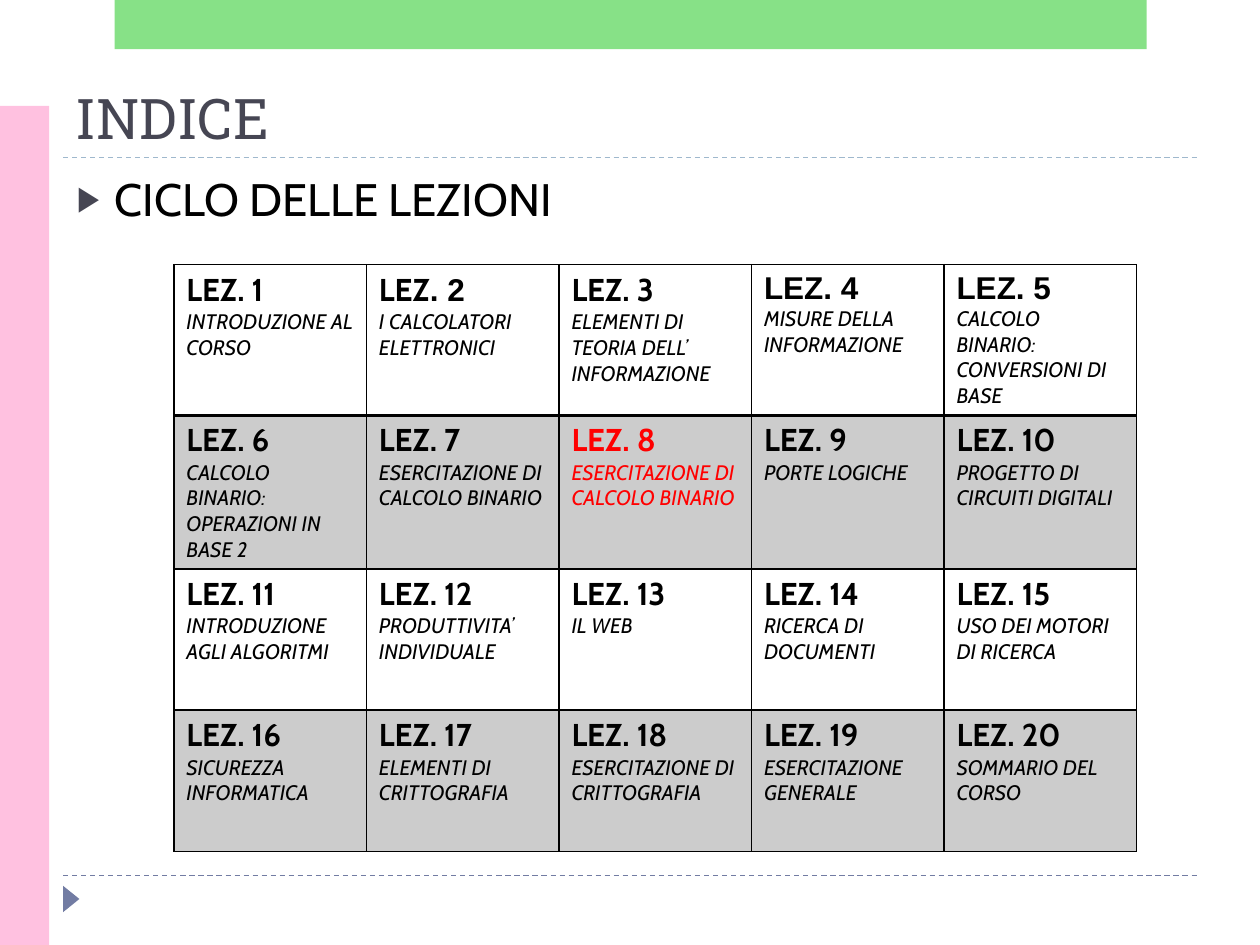
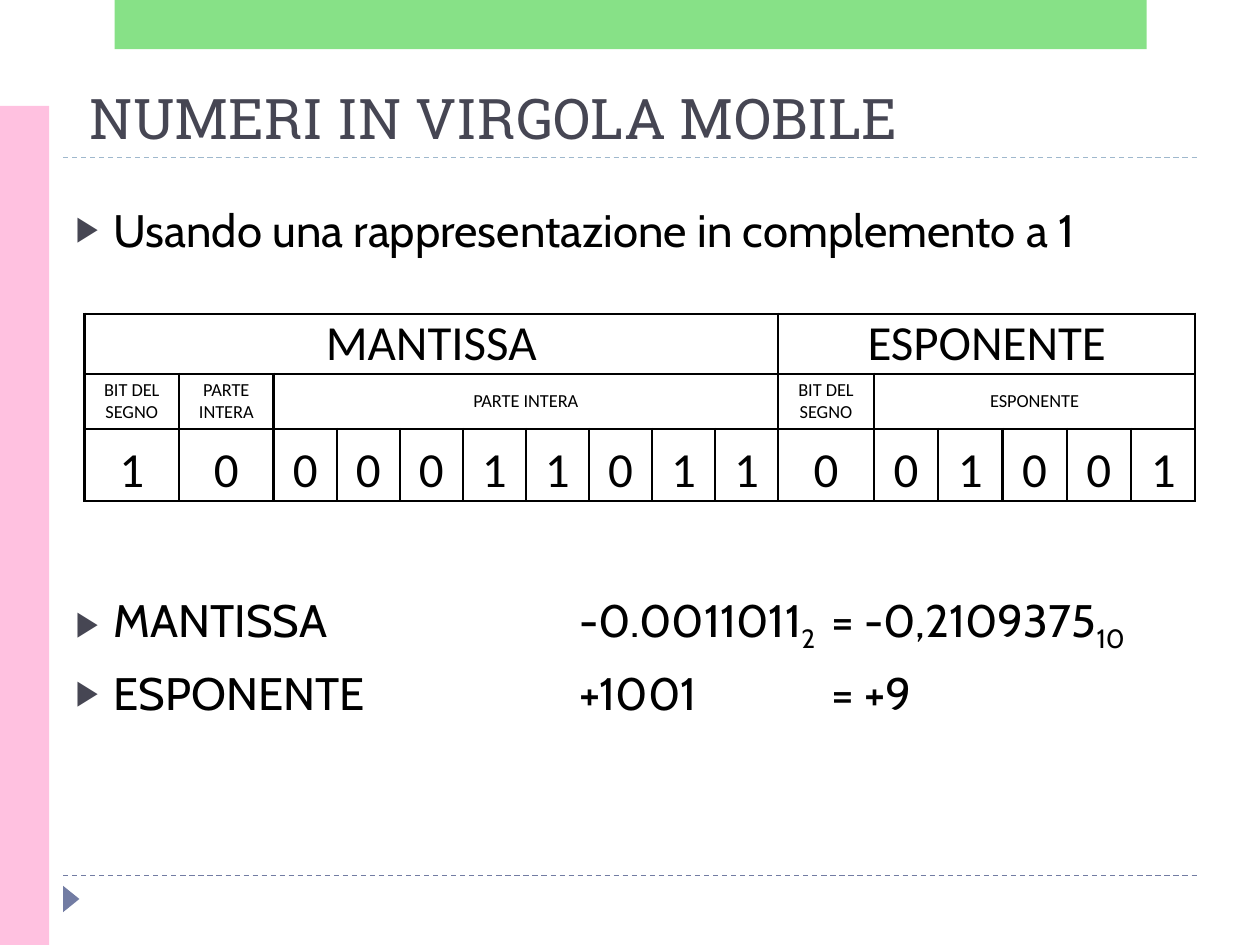
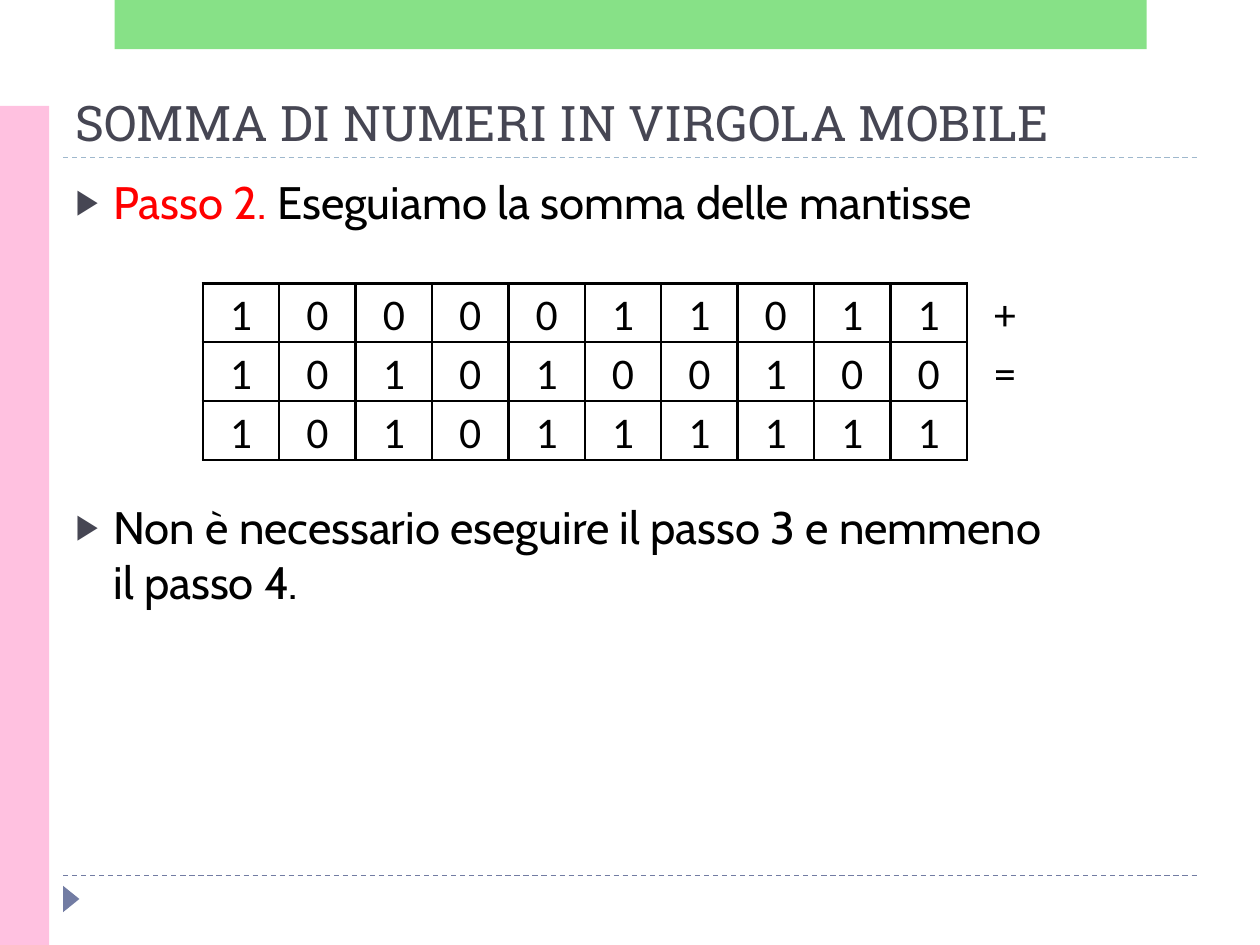
from dataclasses import dataclass

from lxml import etree
from pptx import Presentation
from pptx.dml.color import RGBColor
from pptx.enum.dml import MSO_LINE
from pptx.enum.shapes import MSO_CONNECTOR, MSO_SHAPE
from pptx.enum.text import MSO_ANCHOR, MSO_AUTO_SIZE, PP_ALIGN
from pptx.oxml.ns import qn
from pptx.util import Inches, Pt

DASH = MSO_LINE.DASH
STRAIGHT = MSO_CONNECTOR.STRAIGHT
RECTANGLE, TRIANGLE = MSO_SHAPE.RECTANGLE, MSO_SHAPE.ISOSCELES_TRIANGLE
TOP, MIDDLE, BOTTOM = MSO_ANCHOR.TOP, MSO_ANCHOR.MIDDLE, MSO_ANCHOR.BOTTOM
LEFT, CENTER = PP_ALIGN.LEFT, PP_ALIGN.CENTER
FIXED = MSO_AUTO_SIZE.NONE

WIDTH, HEIGHT = Inches(10), Inches(7.5)
COLUMN, ROW = WIDTH / 100, HEIGHT / 75
SIDES = {"left": "a:lnL", "right": "a:lnR", "top": "a:lnT", "bottom": "a:lnB"}


@dataclass(frozen=True)
class Theme:
    ink: str = "000000"
    paper: str = "FFFFFF"
    heading: str = "464653"
    accent: str = "FF0000"
    footer: str = "727CA3"
    title_rule: str = "9FB8CD"
    side_band: str = "FFC1E0"
    top_band: str = "62D862"
    title_font: str = "Roboto Slab"
    body_font: str = "Cabin"
    digit_font: str = "Calibri"
    plain_font: str = "Arial"
    title_size: float = 32
    long_title_size: float = 28
    body_size: float = 26
    lesson_size: float = 18
    topic_size: float = 12
    field_size: float = 28
    label_size: float = 10.5
    digit_size: float = 25
    list_gap: float = 6
    list_pitch: float = 37.2


THEME = Theme()
BODY_STYLE = {"name": THEME.body_font, "size": Pt(THEME.body_size), "color": THEME.ink}
SUBSCRIPT = {"baseline": "-25000"}


@dataclass(frozen=True)
class Box:
    column: float
    row: float
    columns: float
    rows: float

    def emu(self):
        return [int(n) for n in (self.column * COLUMN, self.row * ROW,
                                 self.columns * COLUMN, self.rows * ROW)]


def set_all(target, values):
    for attribute, value in values.items():
        setattr(target, attribute, value)


def format_font(font, style):
    for attribute, value in style.items():
        if attribute == "color":
            font.color.rgb = RGBColor.from_string(value)
        elif attribute == "baseline":
            font._rPr.set(attribute, value)
        else:
            setattr(font, attribute, value)


def write_runs(paragraph, runs, style):
    for text, changes in runs:
        for index, line in enumerate(text.split("\v")):
            if index:
                paragraph.add_line_break()
            run = paragraph.add_run()
            run.text = line
            format_font(run.font, style | changes)


def paint(fill, color, opacity=100):
    fill.solid()
    fill.fore_color.rgb = RGBColor.from_string(color)
    if opacity < 100:
        solid = fill._xPr.find(qn("a:solidFill"))
        etree.SubElement(solid[0], qn("a:alpha"), val=str(opacity * 1000))


def add_band(slide, kind, box, color, opacity=100, rotation=0):
    band = slide.shapes.add_shape(kind, *box.emu())
    band.shadow.inherit = False
    band.rotation = rotation
    band.line.fill.background()
    paint(band.fill, color, opacity)
    return band


def add_rule(slide, row, color):
    left, top, width, _ = Box(5, row, 90, 0).emu()
    rule = slide.shapes.add_connector(STRAIGHT, left, top, left + width, top)
    set_all(rule.line, {"width": Pt(0.75), "dash_style": DASH})
    rule.line.color.rgb = RGBColor.from_string(color)
    etree.SubElement(rule._element.spPr, qn("a:effectLst"))
    return rule


def move_frame_to_layout(slide):
    frame = [
        add_rule(slide, 69.5, THEME.footer),
        add_rule(slide, 12.5, THEME.title_rule),
        add_band(slide, TRIANGLE, Box(4.6, 70.7, 2.1, 1.3), THEME.footer, rotation=90),
        add_band(slide, RECTANGLE, Box(0, 8.4, 3.9, 66.6), THEME.side_band),
        add_band(slide, RECTANGLE, Box(9.1, 0, 81.9, 3.9), THEME.top_band, opacity=76),
    ]
    for number, part in enumerate(frame, start=20):
        part._element.xpath(".//p:cNvPr")[0].set("id", str(number))
        slide.slide_layout.shapes._spTree.append(part._element)


def place_text(placeholder, box, anchor):
    left, top, width, height = box.emu()
    set_all(placeholder, {"left": left, "top": top, "width": width, "height": height})
    frame = placeholder.text_frame
    set_all(frame, {"word_wrap": True, "auto_size": FIXED, "vertical_anchor": anchor})
    return frame


def write_title(slide, title, size=THEME.title_size):
    frame = place_text(slide.shapes.title, Box(5, 5.5, 90, 7), BOTTOM)
    heading = frame.paragraphs[0]
    heading.alignment = LEFT
    style = {"name": THEME.title_font, "size": Pt(size), "color": THEME.heading}
    write_runs(heading, [(title, {})], style)


def add_bullet(paragraph, tab_stops):
    properties = paragraph._p.get_or_add_pPr()
    properties.set("marL", str(Inches(0.3)))
    properties.set("indent", str(-Inches(0.3)))
    color = etree.SubElement(properties, qn("a:buClr"))
    etree.SubElement(color, qn("a:srgbClr"), val=THEME.heading)
    etree.SubElement(properties, qn("a:buSzPct"), val="76000")
    etree.SubElement(properties, qn("a:buFont"), typeface=THEME.plain_font)
    etree.SubElement(properties, qn("a:buChar"), char="▶")
    if tab_stops:
        stops = etree.SubElement(properties, qn("a:tabLst"))
        for stop in tab_stops:
            etree.SubElement(stops, qn("a:tab"), pos=str(Inches(stop)), algn="l")


def write_list(slide, box, items, tab_stops=()):
    frame = place_text(slide.placeholders[1], box, TOP)
    for index, (skipped_lines, runs) in enumerate(items):
        item = frame.add_paragraph() if index else frame.paragraphs[0]
        add_bullet(item, tab_stops)
        gap = THEME.list_gap + skipped_lines * THEME.list_pitch if index else 0
        set_all(item, {"alignment": LEFT, "space_before": Pt(gap)})
        write_runs(item, runs, BODY_STYLE)


def add_grid(slide, box, shares, row_heights):
    left, top, width, height = box.emu()
    grid = slide.shapes.add_table(len(row_heights), len(shares),
                                  left, top, width, height).table
    set_all(grid, {"first_row": False, "horz_banding": False})
    for column, share in zip(grid.columns, shares):
        column.width = int(width * share / sum(shares))
    for row, row_height in zip(grid.rows, row_heights):
        row.height = int(row_height * ROW)
    for cell in grid.iter_cells():
        cell.fill.background()
    return grid


def draw_borders(cell, widths):
    properties = cell._tc.get_or_add_tcPr()
    for position, (side, tag) in enumerate(SIDES.items()):
        border = etree.Element(qn(tag))
        if widths[side]:
            border.set("w", str(Pt(widths[side])))
            solid = etree.SubElement(border, qn("a:solidFill"))
            etree.SubElement(solid, qn("a:srgbClr"), val=THEME.ink)
        else:
            border.set("w", "0")
            etree.SubElement(border, qn("a:noFill"))
        properties.insert(position, border)


def write_centred(cell, text, size, anchor=BOTTOM, inset=0):
    margin = Inches(inset)
    set_all(cell, {"vertical_anchor": anchor, "margin_left": margin,
                   "margin_right": margin, "margin_top": margin, "margin_bottom": 0})
    entry = cell.text_frame.paragraphs[0]
    entry.alignment = CENTER
    style = {"name": THEME.digit_font, "size": Pt(size), "color": THEME.ink}
    write_runs(entry, [(text, {})], style)


def write_lesson(cell, number, topic, current):
    fonts = {2: (THEME.body_font, THEME.plain_font),
             4: (THEME.plain_font, THEME.plain_font),
             5: (THEME.plain_font, THEME.plain_font)}
    word_font, number_font = fonts.get(number, (THEME.body_font, THEME.body_font))
    color = THEME.accent if number == current else THEME.ink
    heading = cell.text_frame.paragraphs[0]
    write_runs(heading, [("LEZ", {"name": word_font}),
                         (f". {number}", {"name": number_font})],
               {"size": Pt(THEME.lesson_size), "bold": True, "color": color})
    write_runs(cell.text_frame.add_paragraph(), [(topic, {})],
               {"name": THEME.body_font, "size": Pt(THEME.topic_size),
                "italic": True, "color": color})


def draw_lessons(slide, box, topics, per_row, current):
    row_count = len(topics) // per_row
    grid = add_grid(slide, box, [1] * per_row, [box.rows / row_count] * row_count)
    for index, topic in enumerate(topics):
        row, column = divmod(index, per_row)
        cell = grid.cell(row, column)
        write_lesson(cell, index + 1, topic, current)
        if row % 2:
            paint(cell.fill, THEME.ink, opacity=20)
        draw_borders(cell, {"left": 1, "right": 1, "top": 2 if row == 1 else 1,
                            "bottom": 2 if row == 0 else 1})


def draw_float_format(slide, box, shares, bits):
    grid = add_grid(slide, box, shares, [4.7, 4.4, 5.7])
    for cell in grid.iter_cells():
        paint(cell.fill, THEME.paper)
        draw_borders(cell, dict.fromkeys(SIDES, 1.5))
    header_rows = [
        (THEME.field_size, BOTTOM, [("MANTISSA", 10), ("ESPONENTE", 6)]),
        (THEME.label_size, MIDDLE, [("BIT DEL SEGNO", 1), ("PARTE INTERA", 1),
                                    ("PARTE INTERA", 8), ("BIT DEL SEGNO", 1),
                                    ("ESPONENTE", 5)]),
        (THEME.field_size, BOTTOM, [(bit, 1) for bit in bits]),
    ]
    for row, (size, anchor, fields) in enumerate(header_rows):
        column = 0
        for text, span in fields:
            cell = grid.cell(row, column)
            if span > 1:
                cell.merge(grid.cell(row, column + span - 1))
            write_centred(cell, text, size, anchor)
            column += span


def draw_sum(slide, box, lines):
    digits = len(lines[0][0])
    grid = add_grid(slide, box, [1] * (digits + 1), [box.rows / len(lines)] * len(lines))
    for row, (number, operator) in enumerate(lines):
        for column, symbol in enumerate([*number, operator]):
            cell = grid.cell(row, column)
            if symbol:
                write_centred(cell, symbol, THEME.digit_size, inset=0.01)
            widths = dict.fromkeys(SIDES, 1.5 if column < digits else 0)
            draw_borders(cell, widths | {"left": 1.5})


def build_index(slide):
    write_title(slide, "INDICE")
    write_list(slide, Box(5.1, 13.1, 90, 7.9), [(0, [("CICLO DELLE LEZIONI", {})])])
    topics = [
        "INTRODUZIONE AL CORSO", "I CALCOLATORI ELETTRONICI",
        "ELEMENTI DI TEORIA DELL’ INFORMAZIONE", "MISURE DELLA INFORMAZIONE",
        "CALCOLO BINARIO: CONVERSIONI DI BASE",
        "CALCOLO BINARIO: OPERAZIONI IN BASE 2", "ESERCITAZIONE DI CALCOLO BINARIO",
        "ESERCITAZIONE DI CALCOLO BINARIO", "PORTE LOGICHE",
        "PROGETTO DI CIRCUITI DIGITALI",
        "INTRODUZIONE AGLI ALGORITMI", "PRODUTTIVITA’ INDIVIDUALE", "IL WEB",
        "RICERCA DI DOCUMENTI", "USO DEI MOTORI DI RICERCA",
        "SICUREZZA INFORMATICA", "ELEMENTI DI CRITTOGRAFIA",
        "ESERCITAZIONE DI CRITTOGRAFIA", "ESERCITAZIONE GENERALE",
        "SOMMARIO DEL CORSO",
    ]
    draw_lessons(slide, Box(13.8, 21, 76.4, 44.9), topics, per_row=5, current=8)


def build_floating_point(slide):
    write_title(slide, " NUMERI IN VIRGOLA MOBILE")
    write_list(slide, Box(5, 15.5, 90, 52.7), [
        (0, [("Usando una rappresentazione in complemento a 1", {})]),
        (5, [("MANTISSA\t-0.0011011", {}), ("2", SUBSCRIPT),
             ("\t= -0,2109375", {}), ("10", SUBSCRIPT)]),
        (0, [("ESPONENTE\t+1001\t= +9", {})]),
    ], tab_stops=(4, 6))
    shares = [0.75] * 2 + [0.5] * 8 + [0.76] + [0.51] * 5
    draw_float_format(slide, Box(6.7, 24.9, 88.2, 14.8), shares, "1000011011001001")


def build_mantissa_sum(slide):
    write_title(slide, "SOMMA DI NUMERI IN VIRGOLA MOBILE", THEME.long_title_size)
    write_list(slide, Box(5, 13.3, 90, 10.8), [
        (0, [("Passo 2. ", {"color": THEME.accent}),
             ("Eseguiamo la somma delle mantisse", {})]),
        (4, [("Non è necessario eseguire il passo 3 e nemmeno\vil passo 4.", {})]),
    ])
    draw_sum(slide, Box(16.1, 22.5, 66.7, 14),
             [("1000011011", "+"), ("1010100100", "="), ("1010111111", "")])


def main():
    deck = Presentation()
    set_all(deck, {"slide_width": WIDTH, "slide_height": HEIGHT})
    for index, build in enumerate((build_index, build_floating_point, build_mantissa_sum)):
        slide = deck.slides.add_slide(deck.slide_layouts[1])
        if index == 0:
            move_frame_to_layout(slide)
        build(slide)
    deck.save("out.pptx")


if __name__ == "__main__":
    main()
